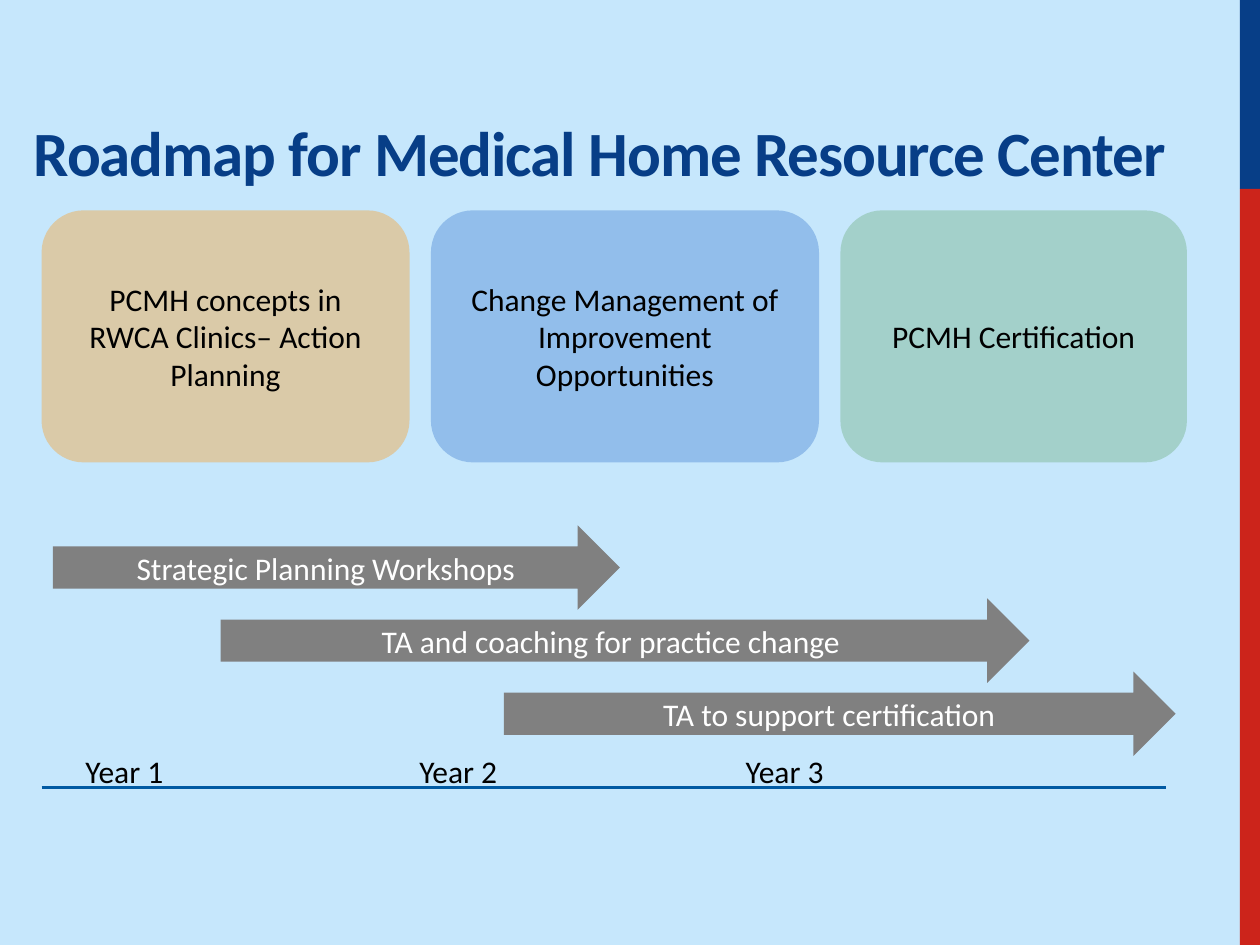
from lxml import etree
from pptx import Presentation
from pptx.dml.color import RGBColor
from pptx.enum.shapes import MSO_CONNECTOR, MSO_SHAPE
from pptx.enum.text import MSO_ANCHOR, PP_ALIGN
from pptx.oxml.ns import qn
from pptx.util import Inches, Pt

RECTANGLE = MSO_SHAPE.RECTANGLE
ROUNDED = MSO_SHAPE.ROUNDED_RECTANGLE
ARROW = MSO_SHAPE.RIGHT_ARROW
STRAIGHT = MSO_CONNECTOR.STRAIGHT
LEFT, CENTER = PP_ALIGN.LEFT, PP_ALIGN.CENTER
TOP, MIDDLE, BOTTOM = MSO_ANCHOR.TOP, MSO_ANCHOR.MIDDLE, MSO_ANCHOR.BOTTOM

FONT = "Calibri"
COLORS = {
    "background": "C6E7FC", "navy": "073E87", "red": "CC241B",
    "orange": "F3A843", "blue": "5C95DA", "green": "7DB995",
    "gray": "808080", "timeline": "005AA3",
    "black": "000000", "white": "FFFFFF",
}

# Phases: text, left, width, color, opacity in percent
PHASES = [
    ("PCMH concepts in RWCA Clinics– Action Planning", 0.33, 2.92, "orange", 45),
    ("Change Management of Improvement Opportunities", 3.42, 3.08, "blue", 49),
    ("PCMH Certification", 6.67, 2.75, "green", 48),
]
# Activities: text, left, width
ACTIVITIES = [
    ("Strategic Planning Workshops", 0.42, 4.5),
    ("TA and coaching for practice change ", 1.75, 6.42),
    ("TA to support certification", 4, 5.33),
]
ACTIVITY_TOP, ACTIVITY_STEP = 4.17, 0.58
YEARS = ["Year 1", "Year 2", "Year 3"]
YEAR_TABS = [2.65, 5.24]


def rgb(name):
    return RGBColor.from_string(COLORS[name])


def write_text(shape, text, size=18, color="black", bold=False,
               align=CENTER, anchor=MIDDLE, spacing=None):
    frame = shape.text_frame
    frame.word_wrap = True
    frame.vertical_anchor = anchor
    paragraph = frame.paragraphs[0]
    paragraph.alignment = align
    run = paragraph.add_run()
    run.text = text
    run.font.name = FONT
    run.font.size = Pt(size)
    run.font.bold = bold
    run.font.color.rgb = rgb(color)
    if spacing is not None:
        run.font._element.set("spc", str(round(spacing * 100)))
    return paragraph


def add_block(slide, kind, left, top, width, height, color, opacity=100):
    shape = slide.shapes.add_shape(
        kind, Inches(left), Inches(top), Inches(width), Inches(height))
    shape.shadow.inherit = False
    shape.fill.solid()
    shape.fill.fore_color.rgb = rgb(color)
    shape.line.fill.background()
    if opacity < 100:
        fill_color = shape._element.spPr.find(qn("a:solidFill"))[0]
        etree.SubElement(fill_color, qn("a:alpha"), val=str(opacity * 1000))
    return shape


def add_text_box(slide, text, left, top, width, height, **text_format):
    box = slide.shapes.add_textbox(
        Inches(left), Inches(top), Inches(width), Inches(height))
    return write_text(box, text, **text_format)


def add_tab_stops(paragraph, positions):
    tabs = etree.SubElement(paragraph._p.get_or_add_pPr(), qn("a:tabLst"))
    for position in positions:
        etree.SubElement(tabs, qn("a:tab"), pos=str(Inches(position)), algn="l")


def add_line(slide, left, right, y, color, width):
    line = slide.shapes.add_connector(
        STRAIGHT, Inches(left), Inches(y), Inches(right), Inches(y))
    line.line.color.rgb = rgb(color)
    line.line.width = Pt(width)
    etree.SubElement(line._element.spPr, qn("a:effectLst"))


def main():
    presentation = Presentation()
    presentation.slide_width = Inches(10)
    presentation.slide_height = Inches(7.5)
    slide = presentation.slides.add_slide(presentation.slide_layouts[6])

    # Background and side bars
    add_block(slide, RECTANGLE, 0, 0, 9.84, 7.5, "background")
    add_block(slide, RECTANGLE, 9.84, 0, 0.16, 1.5, "navy")
    add_block(slide, RECTANGLE, 9.84, 1.5, 0.16, 6, "red")

    # Title
    add_text_box(slide, "Roadmap for Medical Home Resource Center",
                 0.17, 0.3, 9.67, 1.25, size=36, color="navy", bold=True,
                 align=LEFT, anchor=BOTTOM, spacing=-0.6)

    # Phases
    for text, left, width, color, opacity in PHASES:
        box = add_block(slide, ROUNDED, left, 1.67, width, 2, color, opacity)
        write_text(box, text)

    # Activity arrows
    for index, (text, left, width) in enumerate(ACTIVITIES):
        top = ACTIVITY_TOP + index * ACTIVITY_STEP
        arrow = add_block(slide, ARROW, left, top, width, 0.67, "gray")
        write_text(arrow, text, color="white")

    # Timeline
    add_line(slide, 0.33, 9.25, 6.25, "timeline", 2)
    years = add_text_box(slide, "\t".join(YEARS), 0.58, 5.92, 8.08, 0.4,
                         align=LEFT, anchor=TOP)
    add_tab_stops(years, YEAR_TABS)

    presentation.save("out.pptx")


if __name__ == "__main__":
    main()
